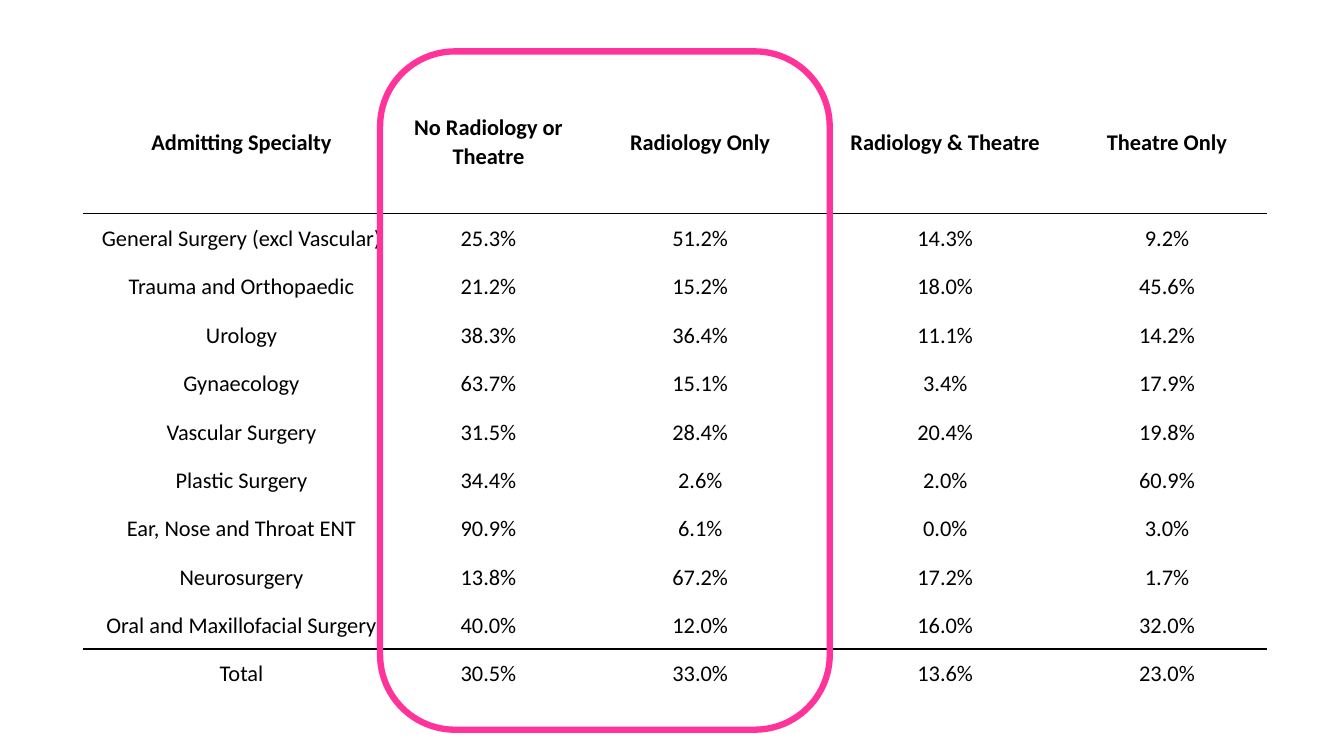
from lxml.etree import SubElement
from pptx import Presentation
from pptx.dml.color import RGBColor
from pptx.enum.shapes import MSO_SHAPE
from pptx.enum.text import MSO_ANCHOR, PP_ALIGN
from pptx.oxml.ns import qn
from pptx.util import Inches, Pt

HEADINGS = ("Admitting Specialty", "No Radiology or Theatre", "Radiology Only",
            "Radiology & Theatre", "Theatre Only")
SPECIALTIES = [
    ("General Surgery (excl Vascular)", "25.3%", "51.2%", "14.3%", "9.2%"),
    ("Trauma and Orthopaedic", "21.2%", "15.2%", "18.0%", "45.6%"),
    ("Urology", "38.3%", "36.4%", "11.1%", "14.2%"),
    ("Gynaecology", "63.7%", "15.1%", "3.4%", "17.9%"),
    ("Vascular Surgery", "31.5%", "28.4%", "20.4%", "19.8%"),
    ("Plastic Surgery", "34.4%", "2.6%", "2.0%", "60.9%"),
    ("Ear, Nose and Throat ENT", "90.9%", "6.1%", "0.0%", "3.0%"),
    ("Neurosurgery", "13.8%", "67.2%", "17.2%", "1.7%"),
    ("Oral and Maxillofacial Surgery", "40.0%", "12.0%", "16.0%", "32.0%"),
]
TOTAL = ("Total", "30.5%", "33.0%", "13.6%", "23.0%")
ROWS = [HEADINGS, *SPECIALTIES, TOTAL]

COLUMN_WIDTHS = (3.13, 1.77, 2.43, 2.43, 1.97)
HEADER_HEIGHT = 1.43
ROW_HEIGHT = 0.48
BLACK = RGBColor(0x00, 0x00, 0x00)
PINK = RGBColor(0xFF, 0x33, 0x99)


def add_border(cell, side):
    """Rule one side of a cell; side is "T" or "B"."""
    properties = cell._tc.get_or_add_tcPr()
    line = SubElement(properties, qn(f"a:ln{side}"), w=str(Pt(1)))
    fill = SubElement(line, qn("a:solidFill"))
    SubElement(fill, qn("a:srgbClr"), val=str(BLACK))
    properties.insert(0, line)


def fill_cell(cell, text, bold):
    cell.fill.background()
    cell.vertical_anchor = MSO_ANCHOR.MIDDLE
    cell.margin_left = cell.margin_right = Inches(0.07)
    cell.margin_top = cell.margin_bottom = 0
    para = cell.text_frame.paragraphs[0]
    para.text = text
    para.alignment = PP_ALIGN.CENTER
    para.line_spacing = 1.07
    para.space_after = Pt(8)
    font = para.runs[0].font
    font.name = "Calibri"
    font.size = Pt(16)
    font.bold = bold
    font.color.rgb = BLACK


deck = Presentation()
deck.slide_width, deck.slide_height = Inches(13.33), Inches(7.5)
page = deck.slides.add_slide(deck.slide_layouts[6])

heights = [HEADER_HEIGHT] + [ROW_HEIGHT] * (len(ROWS) - 1)
table = page.shapes.add_table(
    len(ROWS), len(HEADINGS), Inches(0.83), Inches(0.69),
    Inches(sum(COLUMN_WIDTHS)), Inches(sum(heights))).table
table.first_row = table.horz_banding = False
for column, width in zip(table.columns, COLUMN_WIDTHS):
    column.width = Inches(width)

total_row = len(ROWS) - 1
for row_number, (values, height) in enumerate(zip(ROWS, heights)):
    table.rows[row_number].height = Inches(height)
    for column_number, value in enumerate(values):
        cell = table.cell(row_number, column_number)
        fill_cell(cell, value, bold=row_number == 0)
        if row_number in (0, total_row - 1):
            add_border(cell, "B")
        elif row_number in (1, total_row):
            add_border(cell, "T")

highlight = page.shapes.add_shape(
    MSO_SHAPE.ROUNDED_RECTANGLE,
    Inches(3.77), Inches(0.51), Inches(4.46), Inches(6.73))
highlight.shadow.inherit = False
highlight.fill.background()
highlight.line.color.rgb = PINK
highlight.line.width = Pt(4.5)

deck.save("out.pptx")
